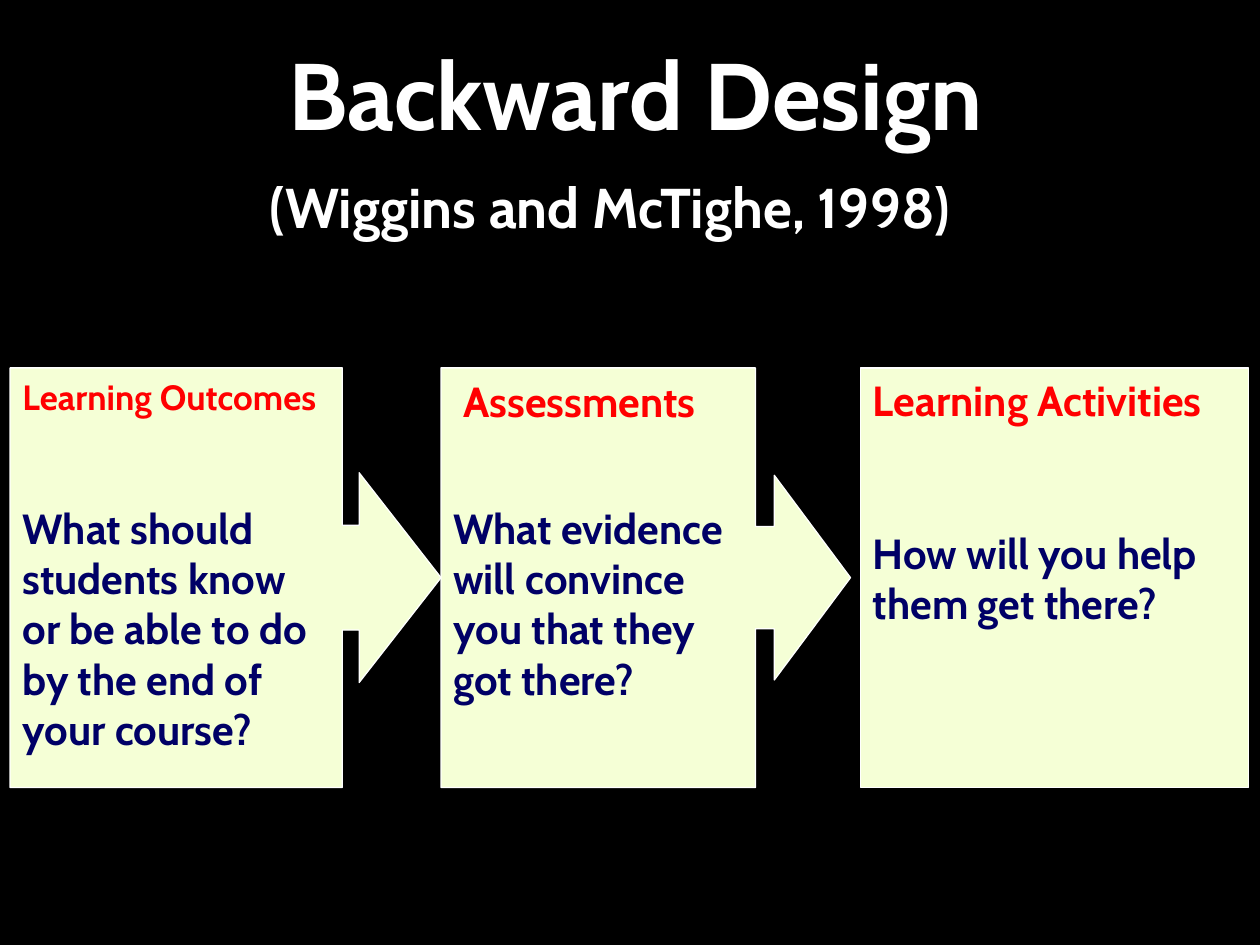
from pptx import Presentation
from pptx.dml.color import RGBColor
from pptx.enum.shapes import MSO_SHAPE
from pptx.enum.text import MSO_ANCHOR, PP_ALIGN
from pptx.util import Inches, Pt

WIDE, HIGH = 10, 7.5
FONT = "Cabin"
COLOR = {"back": "000000", "white": "FFFFFF", "card": "F5FFD6",
         "head": "FF0000", "body": "000066"}
TOP, TALL = 2.92, 3.33   # the row that holds the three cards
LINE = 0.4               # one line of body text

# left, width, arrow head and body shares, lines left free on top, body text
CARDS = [
    (0.08, 3.42, (0.195, 0.771), 2,
     ["What should", "students know", "or be able to do",
      "by the end of", "your course?"]),
    (3.5, 3.25, (0.186, 0.768), 1,
     ["What evidence", "will convince", "you that they", "got there?"]),
    (6.83, 3.08, None, 0, ["How will you help", "them get there?"]),
]
# left, top, width, height, size, text
HEADS = [
    (0.08, 2.93, 3.68, 0.44, 20, "Learning Outcomes"),
    (3.58, 2.93, 2.08, 0.5, 24, "Assessments"),
    (6.83, 2.92, 2.9, 0.5, 24, "Learning Activities"),
]


def rgb(name):
    return RGBColor.from_string(COLOR[name])


def write(frame, lines, size, color, align=PP_ALIGN.LEFT):
    frame.word_wrap = True
    frame.text = "\n".join(lines)
    for par in frame.paragraphs:
        par.alignment = align
        par.font.name = FONT
        par.font.size = Pt(size)
        par.font.bold = True
        par.font.color.rgb = rgb(color)


def add_title(slide, text):
    title = slide.shapes.title
    title.left, title.top = Inches(0.42), Inches(0.32)
    title.width, title.height = Inches(9.25), Inches(1.64)
    frame = title.text_frame
    write(frame, [text], 54, "white", PP_ALIGN.CENTER)
    # Keep the lower half free for the subtitle
    frame.vertical_anchor = MSO_ANCHOR.MIDDLE
    frame.margin_bottom = Inches(0.86)


def add_card(slide, left, wide, arrow, free, lines):
    kind = MSO_SHAPE.RIGHT_ARROW_CALLOUT if arrow else MSO_SHAPE.RECTANGLE
    card = slide.shapes.add_shape(
        kind, Inches(left), Inches(TOP), Inches(wide), Inches(TALL))
    if arrow:
        for i, share in enumerate((0.25, 0.25, *arrow)):
            card.adjustments[i] = share
    card.shadow.inherit = False
    card.fill.solid()
    card.fill.fore_color.rgb = rgb("card")
    card.line.color.rgb = rgb("white")
    card.line.width = Pt(0.75)
    frame = card.text_frame
    frame.vertical_anchor = MSO_ANCHOR.MIDDLE
    frame.margin_top = Inches(0.05 + free * LINE)
    write(frame, lines, 24, "body")


def add_label(slide, left, top, wide, high, size, text, color="head"):
    box = slide.shapes.add_textbox(
        Inches(left), Inches(top), Inches(wide), Inches(high))
    write(box.text_frame, [text], size, color)
    return box


def main():
    deck = Presentation()
    deck.slide_width, deck.slide_height = Inches(WIDE), Inches(HIGH)
    slide = deck.slides.add_slide(deck.slide_layouts[5])
    slide.background.fill.solid()
    slide.background.fill.fore_color.rgb = rgb("back")

    # Title, then cards with their headings on top
    add_title(slide, "Backward Design")
    for card in CARDS:
        add_card(slide, *card)
    for head in HEADS:
        add_label(slide, *head)

    # Subtitle, slightly indented
    sub = add_label(slide, 1.97, 1.32, 6.72, 0.64, 32,
                    "(Wiggins and McTighe, 1998)", "white")
    sub.text_frame.margin_left = Inches(0.17)

    deck.save("out.pptx")


if __name__ == "__main__":
    main()
